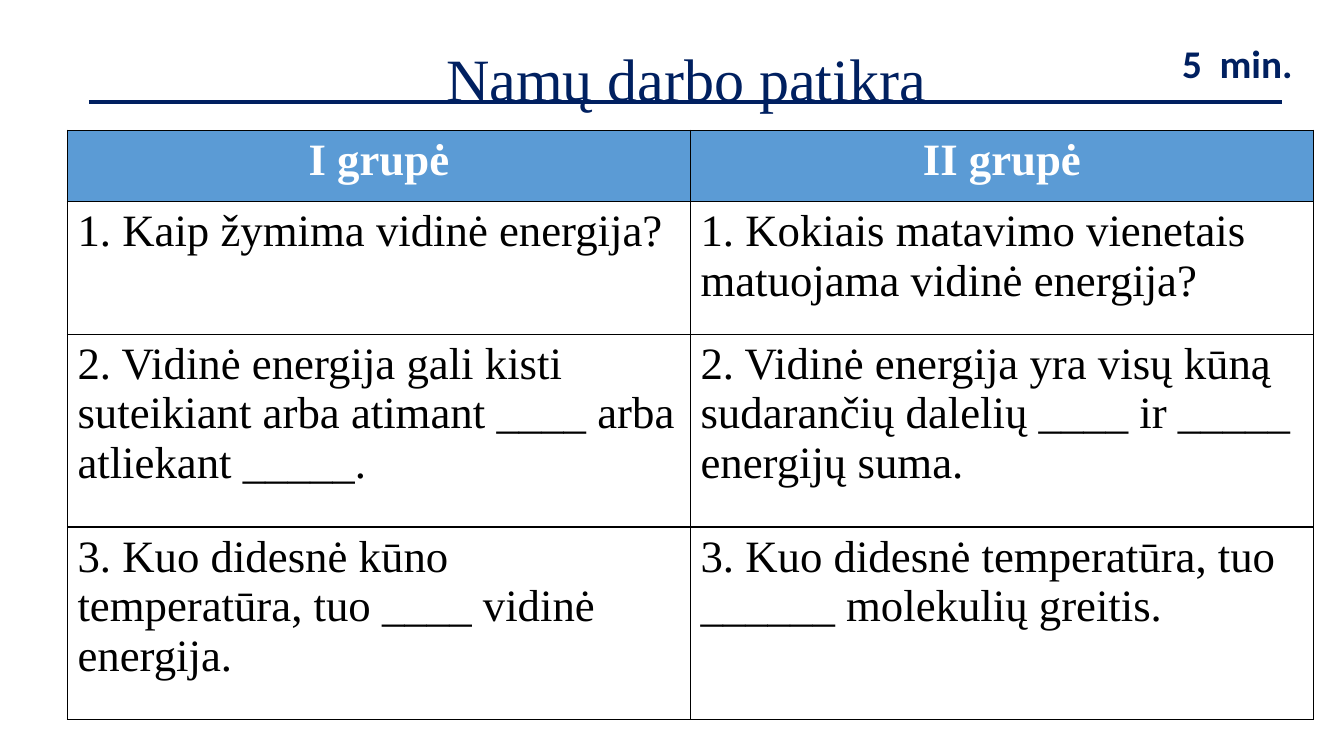
from lxml import etree
from pptx import Presentation
from pptx.dml.color import RGBColor
from pptx.enum.shapes import MSO_CONNECTOR
from pptx.enum.text import MSO_ANCHOR, MSO_AUTO_SIZE, PP_ALIGN
from pptx.oxml import parse_xml
from pptx.oxml.ns import nsdecls, qn
from pptx.util import Cm, Pt

STRAIGHT = MSO_CONNECTOR.STRAIGHT
MIDDLE = MSO_ANCHOR.MIDDLE
NO_FIT = MSO_AUTO_SIZE.NONE
FIT_SHAPE = MSO_AUTO_SIZE.SHAPE_TO_FIT_TEXT
LEFT, CENTER = PP_ALIGN.LEFT, PP_ALIGN.CENTER

COLORS = {
    "navy": "002060",
    "header": "5B9BD5",
    "white": "FFFFFF",
    "black": "000000",
}
SERIF, SANS = "Times New Roman", "Calibri"

QUESTIONS = [
    ("I grupė", "II grupė"),
    ("1. Kaip žymima vidinė energija?",
     "1. Kokiais matavimo vienetais matuojama vidinė energija?"),
    ("2. Vidinė energija gali kisti suteikiant arba atimant ____ arba atliekant _____.",
     "2. Vidinė energija yra visų kūną sudarančių dalelių ____ ir _____ energijų suma."),
    ("3. Kuo didesnė kūno temperatūra, tuo ____ vidinė energija.",
     "3. Kuo didesnė temperatūra, tuo ______ molekulių greitis."),
]
ROW_HEIGHTS = [1.8, 3.34, 4.86, 4.86]


def rgb(name):
    """Return the named palette colour."""
    return RGBColor.from_string(COLORS[name])


def write(frame, text, size, font, color, bold=False, align=LEFT):
    """Put one formatted paragraph into a text frame."""
    frame.text = text
    paragraph = frame.paragraphs[0]
    paragraph.alignment = align
    for run in paragraph.runs:
        run.font.size = Pt(size)
        run.font.name = font
        run.font.bold = bold
        run.font.color.rgb = rgb(color)
    return paragraph


def add_heading(slide, left, top, width):
    """Place the title, the rule across it and the time allowance."""
    title = slide.shapes.title
    title.left, title.top = left + Cm(2.54), top
    title.width, title.height = width - Cm(5.05), Cm(2.87)
    heading = title.text_frame
    heading.auto_size = NO_FIT
    heading.vertical_anchor = MIDDLE
    write(heading, "Namų darbo patikra", 42.9, SERIF, "navy", align=CENTER).line_spacing = 0.9

    rule_y = top + Cm(1.93)
    rule = slide.shapes.add_connector(STRAIGHT, left, rule_y, left + width, rule_y)
    rule.line.color.rgb = rgb("navy")
    rule.line.width = Pt(3)
    etree.SubElement(rule._element.spPr, qn("a:effectLst"))

    duration = slide.shapes.add_textbox(
        left + width - Cm(2.77), top + Cm(0.23), Cm(3.33), Cm(1.45)).text_frame
    duration.word_wrap = False
    duration.auto_size = FIT_SHAPE
    write(duration, "5  min.", 28, SANS, "navy", bold=True)


def add_borders(cell):
    """Draw a thin black line on all four sides of a cell."""
    properties = cell._tc.get_or_add_tcPr()
    for side in ("lnL", "lnR", "lnT", "lnB"):
        properties.append(parse_xml(
            f'<a:{side} {nsdecls("a")} w="{Pt(1)}"><a:solidFill>'
            f'<a:srgbClr val="{COLORS["black"]}"/></a:solidFill></a:{side}>'))


def add_questions(slide, left, top, width):
    """Place the table of questions for the two groups."""
    columns = len(QUESTIONS[0])
    table = slide.shapes.add_table(
        len(QUESTIONS), columns, left, top, width, Cm(sum(ROW_HEIGHTS))).table
    for column in table.columns:
        column.width = width // columns
    for row, height, texts in zip(table.rows, ROW_HEIGHTS, QUESTIONS):
        row.height = Cm(height)
        header = texts is QUESTIONS[0]
        for cell, text in zip(row.cells, texts):
            add_borders(cell)
            cell.fill.solid()
            cell.fill.fore_color.rgb = rgb("header" if header else "white")
            write(cell.text_frame, text, 32, SERIF,
                  "white" if header else "black", header, CENTER if header else LEFT)


def main():
    """Build and save the homework check slide."""
    deck = Presentation()
    deck.slide_width, deck.slide_height = Cm(33.87), Cm(19.05)
    slide = deck.slides.add_slide(deck.slide_layouts[5])
    add_heading(slide, Cm(2.24), Cm(0.64), Cm(30.07))
    add_questions(slide, Cm(1.7), Cm(3.28), Cm(31.4))
    deck.save("out.pptx")


if __name__ == "__main__":
    main()
